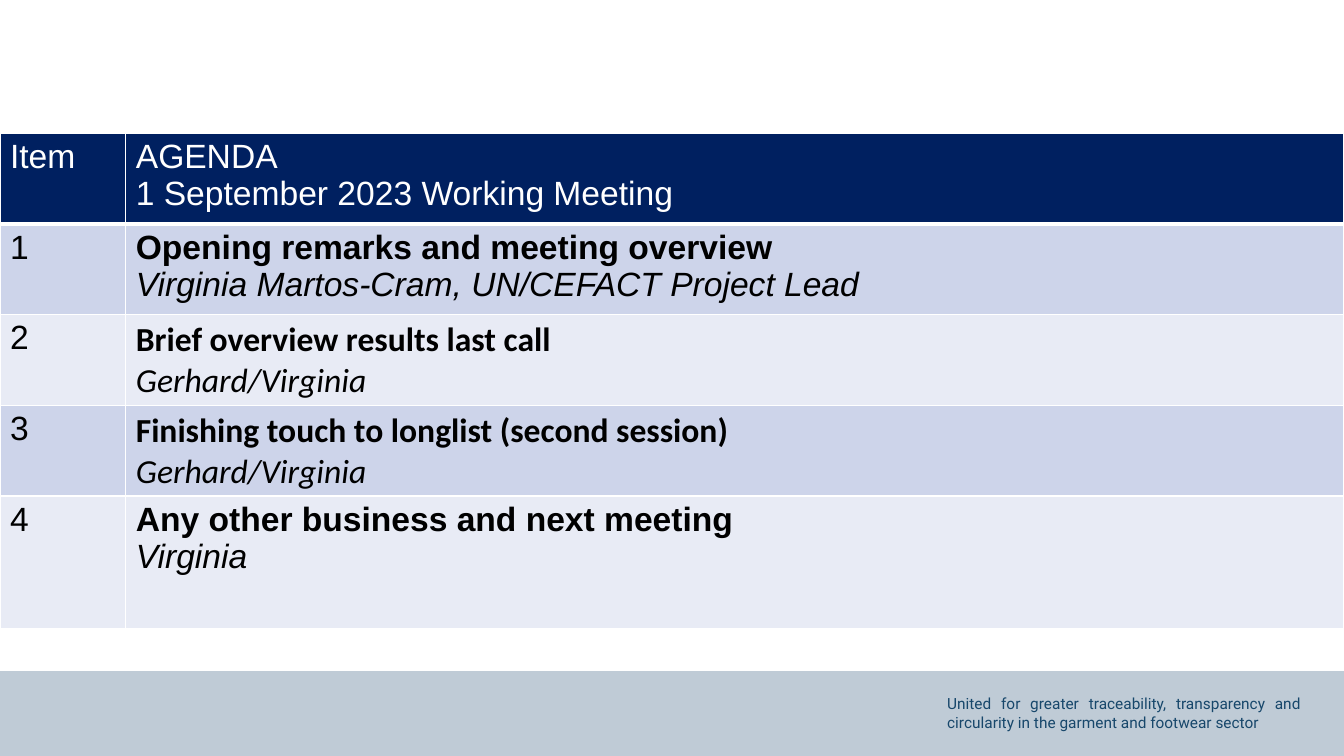
"""Build the agenda slide of a working meeting."""
from dataclasses import dataclass

from lxml import etree
from pptx import Presentation
from pptx.dml.color import RGBColor
from pptx.enum.shapes import MSO_SHAPE
from pptx.enum.text import PP_ALIGN
from pptx.oxml.ns import qn
from pptx.util import Cm, Pt

RECTANGLE = MSO_SHAPE.RECTANGLE
JUSTIFY = PP_ALIGN.JUSTIFY
BLANK_LAYOUT = 6


@dataclass(frozen=True)
class Theme:
    """Colours, fonts and type sizes of the slide."""
    header: str = "002060"
    bands: tuple = ("CDD4EA", "E8EBF5")
    white: str = "FFFFFF"
    black: str = "000000"
    footer_band: str = "BFCBD6"
    footer_text: str = "17476B"
    body_font: str = "Arial"
    call_font: str = "Calibri"
    footer_font: str = "Roboto"
    table_size: int = 24
    footer_size: int = 11


THEME = Theme()
SLIDE_WIDTH, SLIDE_HEIGHT = Cm(33.87), Cm(19.05)
ITEM_WIDTH = Cm(3.17)
ROW_HEIGHT, LAST_ROW_HEIGHT = Cm(2.28), Cm(3.33)
HEADING = ("AGENDA", "1 September 2023 Working Meeting")
AGENDA = (
    ("Opening remarks and meeting overview",
     "Virginia Martos-Cram, UN/CEFACT Project Lead", THEME.body_font),
    ("Brief overview results last call", "Gerhard/Virginia", THEME.call_font),
    ("Finishing touch to longlist (second session)", "Gerhard/Virginia", THEME.call_font),
    ("Any other business and next meeting", "Virginia", THEME.body_font),
)
FOOTER = ("United for greater traceability, transparency and circularity "
          "in the garment and footwear sector")


def add_run(paragraph, text, font, size, color, bold=False, italic=False):
    """Add one formatted run to a paragraph."""
    run = paragraph.add_run()
    run.text = text
    run.font.name = font
    run.font.size = Pt(size)
    run.font.color.rgb = RGBColor.from_string(color)
    run.font.bold = bold
    run.font.italic = italic


def set_borders(cell, bottom_width):
    """Draw white lines on the four sides of a cell."""
    properties = cell._tc.get_or_add_tcPr()
    widths = {"a:lnL": 1, "a:lnR": 1, "a:lnT": 1, "a:lnB": bottom_width}
    for tag, width in widths.items():
        line = etree.SubElement(properties, qn(tag), w=str(Pt(width)))
        fill = etree.SubElement(line, qn("a:solidFill"))
        etree.SubElement(fill, qn("a:srgbClr"), val=THEME.white)


def fill_cell(cell, lines, fill, color, font=THEME.body_font, bottom_width=1):
    """Write (text, bold, italic) lines into a cell and colour it."""
    set_borders(cell, bottom_width)
    cell.fill.solid()
    cell.fill.fore_color.rgb = RGBColor.from_string(fill)
    frame = cell.text_frame
    for index, (text, bold, italic) in enumerate(lines):
        paragraph = frame.add_paragraph() if index else frame.paragraphs[0]
        add_run(paragraph, text, font, THEME.table_size, color, bold, italic)


def add_agenda(slide):
    """Add the agenda table with its heading and numbered items."""
    row_count = len(AGENDA) + 1
    height = ROW_HEIGHT * len(AGENDA) + LAST_ROW_HEIGHT
    shape = slide.shapes.add_table(row_count, 2, 0, Cm(3.35), SLIDE_WIDTH, height)
    table = shape.table
    table.columns[0].width = ITEM_WIDTH
    table.columns[1].width = SLIDE_WIDTH - ITEM_WIDTH
    for row in table.rows:
        row.height = ROW_HEIGHT
    table.rows[row_count - 1].height = LAST_ROW_HEIGHT

    for column, texts in enumerate((("Item",), HEADING)):
        lines = [(text, False, False) for text in texts]
        fill_cell(table.cell(0, column), lines, THEME.header, THEME.white, bottom_width=3)
    for number, (topic, speaker, font) in enumerate(AGENDA, start=1):
        band = THEME.bands[(number - 1) % 2]
        fill_cell(table.cell(number, 0), [(str(number), False, False)], band, THEME.black)
        lines = [(topic, True, False), (speaker, False, True)]
        fill_cell(table.cell(number, 1), lines, band, THEME.black, font)


def add_footer(slide):
    """Add the footer band and its justified motto."""
    top = Cm(16.91)
    band = slide.shapes.add_shape(RECTANGLE, 0, top, SLIDE_WIDTH, SLIDE_HEIGHT - top)
    band.shadow.inherit = False
    band.fill.solid()
    band.fill.fore_color.rgb = RGBColor.from_string(THEME.footer_band)
    band.line.fill.background()
    motto = slide.shapes.add_textbox(Cm(23.62), Cm(17.37), Cm(9.42), Cm(1.2))
    motto.text_frame.word_wrap = True
    paragraph = motto.text_frame.paragraphs[0]
    paragraph.alignment = JUSTIFY
    add_run(paragraph, FOOTER, THEME.footer_font, THEME.footer_size, THEME.footer_text)


def main():
    """Create and save the presentation."""
    presentation = Presentation()
    presentation.slide_width = SLIDE_WIDTH
    presentation.slide_height = SLIDE_HEIGHT
    slide = presentation.slides.add_slide(presentation.slide_layouts[BLANK_LAYOUT])
    add_footer(slide)
    add_agenda(slide)
    presentation.save("out.pptx")


if __name__ == "__main__":
    main()
